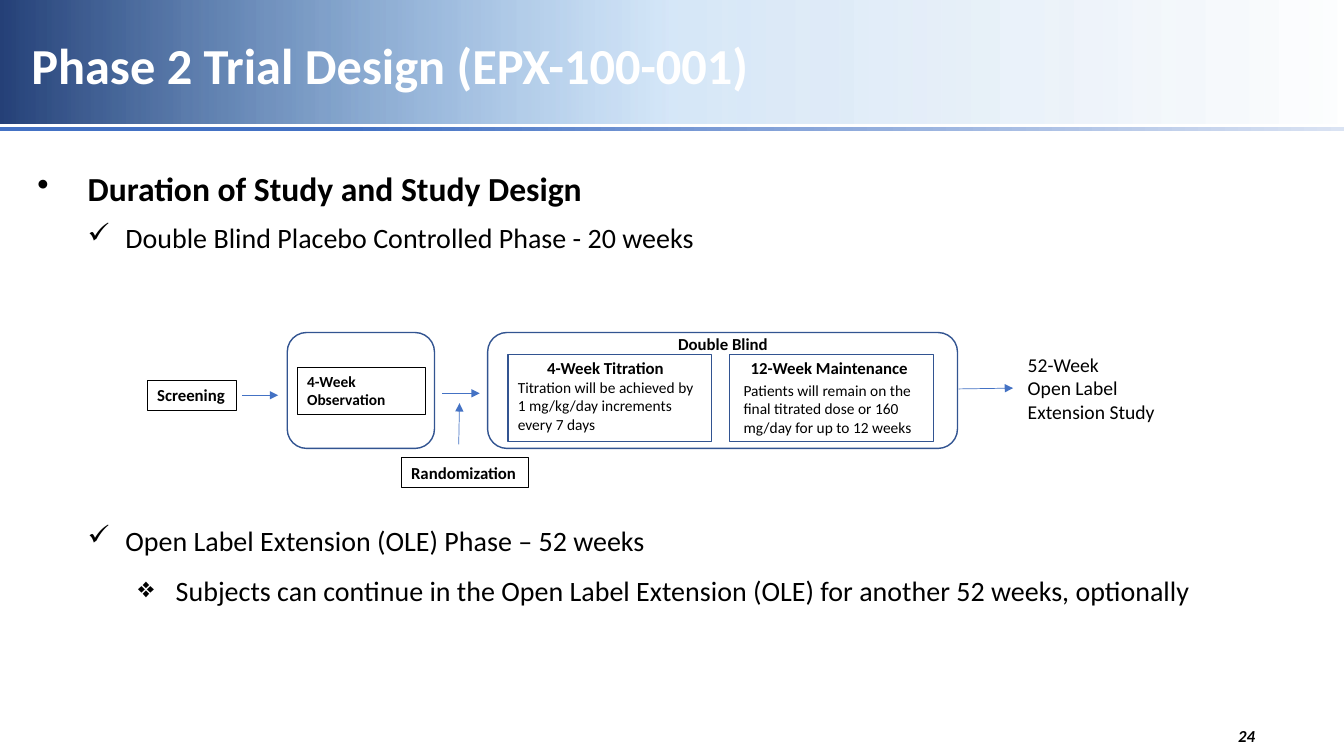
from dataclasses import dataclass
from typing import Optional

from lxml.etree import SubElement
from pptx import Presentation
from pptx.dml.color import RGBColor
from pptx.enum.shapes import MSO_CONNECTOR as Connector, MSO_SHAPE as Preset
from pptx.enum.text import MSO_ANCHOR as Anchor, PP_ALIGN as Align
from pptx.oxml.ns import qn
from pptx.util import Cm, Pt


@dataclass(frozen=True)
class Theme:
    font: str = "Calibri"
    ink: str = "000000"
    title_ink: str = "FFFFFF"
    frame: str = "325491"
    arrow: str = "4472C4"
    title: float = 36
    heading: float = 24
    bullet: float = 20
    outcome: float = 14
    label: float = 12
    detail: float = 11
    frame_line: float = 1
    label_line: float = 0.75
    arrow_line: float = 0.5


THEME = Theme()


@dataclass(frozen=True)
class Box:
    left: float
    top: float
    width: float
    height: float

    def lengths(self) -> tuple:
        return Cm(self.left), Cm(self.top), Cm(self.width), Cm(self.height)


@dataclass(frozen=True)
class Stop:
    position: int
    color: str
    alpha: int = 100


@dataclass(frozen=True)
class Band:
    box: Box
    angle: int
    stops: tuple


@dataclass(frozen=True)
class Frame:
    box: Box
    preset: Preset = Preset.RECTANGLE


@dataclass(frozen=True)
class Label:
    box: Box
    lines: tuple
    size: float = THEME.label
    bold: bool = True
    italic: Optional[bool] = None
    outlined: bool = False
    wrap: bool = False
    align: Align = Align.LEFT
    anchor: Anchor = Anchor.TOP


@dataclass(frozen=True)
class Arrow:
    start: tuple
    end: tuple


@dataclass(frozen=True)
class Point:
    text: str
    mark: str
    margin: float
    hanging: float
    level: int = 0
    size: float = THEME.bullet
    bold: bool = False
    before: float = 0


BANDS = (
    Band(Box(0, -0.08, 33.87, 3.2), 180,
         (Stop(0, "1B67B3", 0), Stop(50, "217DD9", 18), Stop(100, "002060", 85))),
    Band(Box(0, 3.2, 33.87, 0.1), 0, (Stop(26, "4472C4"), Stop(100, "DAE3F3"))),
)

POINTS = (
    Point("Duration of Study and Study Design", "•", 1.27, 1.27,
          size=THEME.heading, bold=True),
    Point("Double Blind Placebo Controlled Phase - 20 weeks", "✓", 2.22, 0.95, 1, before=9),
    Point("Open Label Extension (OLE) Phase – 52 weeks", "✓", 2.22, 0.95, 1, before=192),
    Point("Subjects can continue in the Open Label Extension (OLE) for another 52 weeks, optionally",
          "❖", 3.49, 0.95, 2, before=12),
)

FRAMES = (
    Frame(Box(7.24, 8.38, 3.71, 2.92), Preset.ROUNDED_RECTANGLE),
    Frame(Box(12.29, 8.38, 11.84, 2.92), Preset.ROUNDED_RECTANGLE),
    Frame(Box(12.8, 8.94, 5.13, 2.18)),
    Frame(Box(18.39, 8.94, 5.13, 2.18)),
)

LABELS = (
    Label(Box(3.71, 9.58, 2.24, 0.76), ("Screening",), outlined=True),
    Label(Box(7.49, 9.25, 3.23, 1.19), ("4-Week Observation",), THEME.detail,
          outlined=True, wrap=True),
    Label(Box(16.84, 8.28, 2.79, 0.76), ("Double Blind",)),
    Label(Box(13.54, 8.89, 3.51, 0.76), ("4-Week Titration",)),
    Label(Box(18.67, 8.89, 4.62, 0.76), ("12-Week Maintenance",)),
    Label(Box(12.8, 9.4, 5.13, 1.68),
          ("Titration will be achieved by 1 mg/kg/day increments every 7 days",),
          THEME.detail, False, wrap=True),
    Label(Box(18.49, 9.47, 4.83, 1.68),
          ("Patients will remain on the final titrated dose or 160 mg/day for up to 12 weeks",),
          THEME.detail, False, wrap=True),
    Label(Box(10.11, 11.53, 3.2, 0.76), ("Randomization",), outlined=True),
    Label(Box(25.65, 8.76, 4.5, 2.06), ("52-Week", "Open Label", "Extension Study"),
          THEME.outcome, False, wrap=True),
    Label(Box(24.26, 18.03, 7.62, 1.02), ("24",), italic=True, wrap=True,
          align=Align.RIGHT, anchor=Anchor.MIDDLE),
)

ARROWS = (
    Arrow((11.56, 11.2), (11.58, 10.16)),
    Arrow((6.1, 9.96), (7.01, 9.96)),
    Arrow((11.15, 9.91), (12.09, 9.91)),
    Arrow((24.16, 9.8), (25.53, 9.78)),
)


def set_font(paragraph, size: float, bold: bool, color: str = THEME.ink,
             italic: Optional[bool] = None) -> None:
    font = paragraph.font
    font.name, font.size, font.bold, font.italic = THEME.font, Pt(size), bold, italic
    font.color.rgb = RGBColor.from_string(color)


def set_line(line, color: str, width: float) -> None:
    line.color.rgb = RGBColor.from_string(color)
    line.width = Pt(width)


def place(shape, box: Box) -> None:
    shape.left, shape.top, shape.width, shape.height = box.lengths()


def draw_title(slide, text: str):
    title = slide.shapes.title
    place(title, Box(0, 0.33, 31.55, 2.79))
    frame = title.text_frame
    frame.text = text
    frame.word_wrap = True
    frame.vertical_anchor = Anchor.MIDDLE
    frame.margin_left, frame.margin_right = Cm(0.79), Cm(0.25)
    frame.margin_top = frame.margin_bottom = 0
    heading = frame.paragraphs[0]
    heading.alignment = Align.LEFT
    heading.line_spacing = 0.9
    set_font(heading, THEME.title, True, THEME.title_ink)
    return title


def draw_band(slide, band: Band, title) -> None:
    bar = slide.shapes.add_shape(Preset.RECTANGLE, *band.box.lengths())
    bar.shadow.inherit = False
    bar.line.fill.background()
    bar.fill.gradient()
    gradient = bar.element.spPr.find(qn("a:gradFill"))
    stops = gradient.find(qn("a:gsLst"))
    for preset_stop in list(stops):
        stops.remove(preset_stop)
    for stop in band.stops:
        entry = SubElement(stops, qn("a:gs"), pos=str(stop.position * 1000))
        color = SubElement(entry, qn("a:srgbClr"), val=stop.color)
        if stop.alpha < 100:
            SubElement(color, qn("a:alpha"), val=str(stop.alpha * 1000))
    gradient.find(qn("a:lin")).set("ang", str(band.angle * 60000))
    title.element.addprevious(bar.element)


def draw_points(slide, box: Box, points: tuple) -> None:
    frame = slide.shapes.add_textbox(*box.lengths()).text_frame
    frame.word_wrap = True
    for index, point in enumerate(points):
        paragraph = frame.add_paragraph() if index else frame.paragraphs[0]
        paragraph.text = point.text
        paragraph.level = point.level
        if point.before:
            paragraph.space_before = Pt(point.before)
        properties = paragraph._p.get_or_add_pPr()
        properties.set("marL", str(Cm(point.margin)))
        properties.set("indent", str(-Cm(point.hanging)))
        SubElement(properties, qn("a:buChar"), char=point.mark)
        set_font(paragraph, point.size, point.bold)


def draw_frame(slide, frame: Frame) -> None:
    outline = slide.shapes.add_shape(frame.preset, *frame.box.lengths())
    outline.shadow.inherit = False
    outline.fill.background()
    set_line(outline.line, THEME.frame, THEME.frame_line)


def draw_label(slide, label: Label) -> None:
    caption = slide.shapes.add_textbox(*label.box.lengths())
    if label.outlined:
        set_line(caption.line, THEME.ink, THEME.label_line)
    frame = caption.text_frame
    frame.word_wrap = label.wrap
    frame.vertical_anchor = label.anchor
    frame.text = "\n".join(label.lines)
    for paragraph in frame.paragraphs:
        paragraph.alignment = label.align
        set_font(paragraph, label.size, label.bold, italic=label.italic)


def draw_arrow(slide, arrow: Arrow) -> None:
    ends = [Cm(value) for value in (*arrow.start, *arrow.end)]
    connector = slide.shapes.add_connector(Connector.STRAIGHT, *ends)
    set_line(connector.line, THEME.arrow, THEME.arrow_line)
    properties = connector.element.spPr
    SubElement(properties.find(qn("a:ln")), qn("a:tailEnd"), type="triangle")
    SubElement(properties, qn("a:effectLst"))


def main() -> None:
    deck = Presentation()
    deck.slide_width, deck.slide_height = Cm(33.87), Cm(19.05)
    slide = deck.slides.add_slide(deck.slide_layouts.get_by_name("Title Only"))
    title = draw_title(slide, "Phase 2 Trial Design (EPX-100-001)")
    for band in BANDS:
        draw_band(slide, band, title)
    draw_points(slide, Box(0.69, 4.11, 30.05, 14.96), POINTS)
    for frame in FRAMES:
        draw_frame(slide, frame)
    for label in LABELS:
        draw_label(slide, label)
    for arrow in ARROWS:
        draw_arrow(slide, arrow)
    deck.save("out.pptx")


if __name__ == "__main__":
    main()
